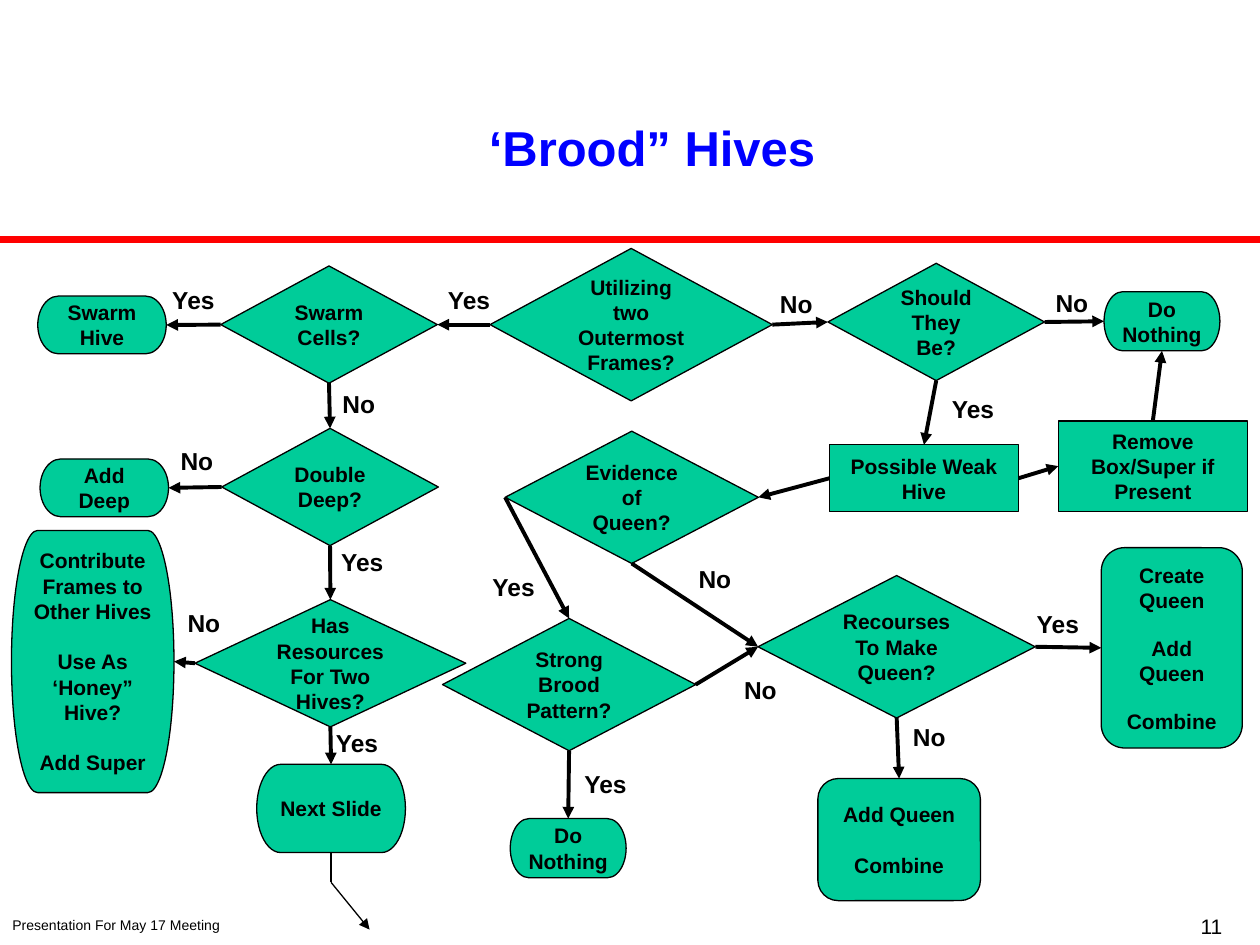
import pptx
import pptx.util
import pptx.dml.color
import pptx.enum.shapes
import pptx.enum.text
import pptx.oxml
import pptx.oxml.ns

Pt = pptx.util.Pt
MSO = pptx.enum.shapes.MSO_SHAPE
ALIGN = pptx.enum.text.PP_ALIGN
ANCHOR = pptx.enum.text.MSO_ANCHOR

COLORS = {"black": "000000", "blue": "0000FF", "red": "FF0000", "green": "00CC99"}
TOP, LEFT, BOTTOM, RIGHT = range(4)

KINDS = {
    "decision": MSO.FLOWCHART_DECISION,
    "terminator": MSO.FLOWCHART_TERMINATOR,
    "process": MSO.FLOWCHART_PROCESS,
    "alternate": MSO.FLOWCHART_ALTERNATE_PROCESS,
}
SMALL, MEDIUM = (123.8, 67), (144.7, 75.6)
END, NOTHING = (73.4, 33), (66.2, 33.8)
ANSWER_W, ANSWER_H = 42.5, 24.5

NODES = {
    "frames": ("decision", 360.7, 45.5, (161.3, 87.1), ["Utilizing two Outermost Frames?"], 0),
    "cells": ("decision", 188, 45.5, SMALL, ["Swarm Cells?"], 0),
    "should": ("decision", 535, 44, SMALL, ["Should They Be?"], 0),
    "leave": ("terminator", 664, 43.6, NOTHING, ["Do Nothing"], 0),
    "swarm": ("terminator", 58.3, 45.7, END, ["Swarm Hive"], 0),
    "double": ("decision", 188.6, 138.3, SMALL, ["Double Deep?"], 0),
    "deep": ("terminator", 59.6, 138.8, END, ["Add Deep"], 0),
    "contribute": ("terminator", 53, 238, (92.9, 149.8),
                   ["Contribute Frames to Other Hives", "Use As ‘Honey” Hive?", "Add Super"], 14.5),
    "resources": ("decision", 188.8, 239, (154.8, 72.7), ["Has Resources For Two Hives?"], 0),
    "next": ("terminator", 189.2, 322, (85, 50.4), ["Next Slide"], 0),
    "evidence": ("decision", 361, 144.2, MEDIUM, ["Evidence of Queen?"], 0),
    "weak": ("process", 528, 133.3, (108, 38.2), ["Possible Weak Hive"], 0),
    "remove": ("process", 658.8, 126.4, (108, 51.8), ["Remove Box/Super if Present"], 0),
    "create": ("alternate", 669.6, 230.2, (80.6, 114.5),
               ["Create Queen", "Add Queen", "Combine"], 13),
    "strong": ("decision", 325.2, 251.2, MEDIUM, ["Strong Brood Pattern?"], 0),
    "stop": ("terminator", 324.7, 344.7, NOTHING, ["Do Nothing"], 0),
    "add": ("alternate", 513.8, 339.8, (92.9, 69.8), ["Add Queen", "Combine"], 14.5),
    "recourses": ("decision", 512.4, 229.6, (158.4, 81.4), ["Recourses To Make Queen?"], 0),
}

LINKS = [
    ("frames", LEFT, "cells", RIGHT), ("frames", RIGHT, "should", LEFT),
    ("should", RIGHT, "leave", LEFT), ("should", BOTTOM, "weak", TOP),
    ("cells", LEFT, "swarm", RIGHT), ("cells", BOTTOM, "double", TOP),
    ("double", LEFT, "deep", RIGHT), ("double", BOTTOM, "resources", TOP),
    ("resources", LEFT, "contribute", RIGHT), ("resources", BOTTOM, "next", TOP),
    ("weak", LEFT, "evidence", RIGHT), ("weak", RIGHT, "remove", LEFT),
    ("remove", TOP, "leave", BOTTOM), ("evidence", LEFT, "strong", TOP),
    ("evidence", BOTTOM, "recourses", LEFT), ("strong", RIGHT, "recourses", LEFT),
    ("strong", BOTTOM, "stop", TOP), ("recourses", RIGHT, "create", LEFT),
    ("recourses", BOTTOM, "add", TOP),
]

ANSWERS = {
    "Yes": [(268, 31.5), (556, 93.5), (110.5, 31.5), (207, 181), (204, 284.5),
            (604.5, 216.5), (346, 308), (293.5, 195)],
    "No": [(455, 33.5), (612.5, 33), (205, 90.5), (112.5, 123.5), (116.5, 216),
           (408.5, 190.5), (434.5, 254), (531, 281)],
}


def rgb(name):
    return pptx.dml.color.RGBColor.from_string(COLORS[name])


def write(tf, paragraphs, size=12, color="black", bold=True, align=ALIGN.CENTER,
          anchor=ANCHOR.MIDDLE, gap=0, spacing=None):
    tf.word_wrap = True
    tf.auto_size = pptx.enum.text.MSO_AUTO_SIZE.NONE
    tf.vertical_anchor = anchor
    for i, text in enumerate(paragraphs):
        p = tf.add_paragraph() if i else tf.paragraphs[0]
        p.alignment = align
        p.space_before = Pt(gap if i else 0)
        if spacing:
            p.line_spacing = Pt(spacing)
        r = p.add_run()
        r.text = text
        r.font.name = "Arial"
        r.font.size = Pt(size)
        r.font.bold = bold
        r.font.color.rgb = rgb(color)


def add_text(s, box, text, **fmt):
    sp = s.shapes.add_textbox(*map(Pt, box))
    write(sp.text_frame, [text], **fmt)


def add_line(s, points=(0, 0, 0, 0), width=2.25, color="black", arrow=True):
    sp = s.shapes.add_connector(pptx.enum.shapes.MSO_CONNECTOR.STRAIGHT, *map(Pt, points))
    sp.line.width = Pt(width)
    sp.line.color.rgb = rgb(color)
    if arrow:
        ln = sp.line._get_or_add_ln()
        ln.append(pptx.oxml.parse_xml(
            '<a:tailEnd %s type="triangle"/>' % pptx.oxml.ns.nsdecls("a")))
    sp._element.spPr.append(pptx.oxml.parse_xml(
        "<a:effectLst %s/>" % pptx.oxml.ns.nsdecls("a")))
    return sp


def add_node(s, x, y, kind, cx, cy, size, paragraphs, gap):
    w, h = size
    sp = s.shapes.add_shape(KINDS[kind], Pt(x + cx - w / 2), Pt(y + cy - h / 2), Pt(w), Pt(h))
    sp.shadow.inherit = False
    sp.fill.solid()
    sp.fill.fore_color.rgb = rgb("green")
    sp.line.color.rgb = rgb("black")
    sp.line.width = Pt(0.75)
    write(sp.text_frame, paragraphs, gap=gap)
    if kind == "terminator":
        sp.text_frame.margin_left = sp.text_frame.margin_right = Pt(6)
    return sp


def add_header(s, x, y, w, h):
    add_line(s, (x, y + h, x + w, y + h), width=4, color="red", arrow=False)
    title = s.shapes.title
    title.left, title.top, title.width, title.height = map(Pt, (x + 148.3, y + 59, 448.6, 54))
    write(title.text_frame, ["‘Brood” Hives"], size=28, color="blue", spacing=30)


def add_flowchart(s, x, y):
    nodes = {name: add_node(s, x, y, *node) for name, node in NODES.items()}
    for start, start_side, end, end_side in LINKS:
        sp = add_line(s)
        sp.begin_connect(nodes[start], start_side)
        sp.end_connect(nodes[end], end_side)
    exit_x, exit_y = x + NODES["next"][1], y + 347.2
    add_line(s, (exit_x, exit_y, exit_x, exit_y + 17), width=0.75, arrow=False)
    add_line(s, (exit_x, exit_y + 17, exit_x + 22, exit_y + 44), width=0.75)
    for answer, centres in ANSWERS.items():
        for cx, cy in centres:
            box = (x + cx - ANSWER_W / 2, y + cy - ANSWER_H / 2, ANSWER_W, ANSWER_H)
            add_text(s, box, answer, size=14)


def add_footer(s, x, y, w):
    add_text(s, (x, y + 2, 200, 17.3), "Presentation For May 17 Meeting", size=8,
             bold=False, align=ALIGN.LEFT, anchor=ANCHOR.TOP)
    add_text(s, (x + w - 270, y, 255.6, 21.6), "11", size=12,
             bold=False, align=ALIGN.RIGHT, anchor=ANCHOR.TOP)


def main():
    prs = pptx.Presentation()
    prs.slide_width, prs.slide_height = Pt(720), Pt(540)
    s = prs.slides.add_slide(prs.slide_layouts[5])
    add_header(s, 0, 0, 720, 136.8)
    add_flowchart(s, 0, 140)
    add_footer(s, 0, 518.4, 720)
    prs.save("out.pptx")


if __name__ == "__main__":
    main()
